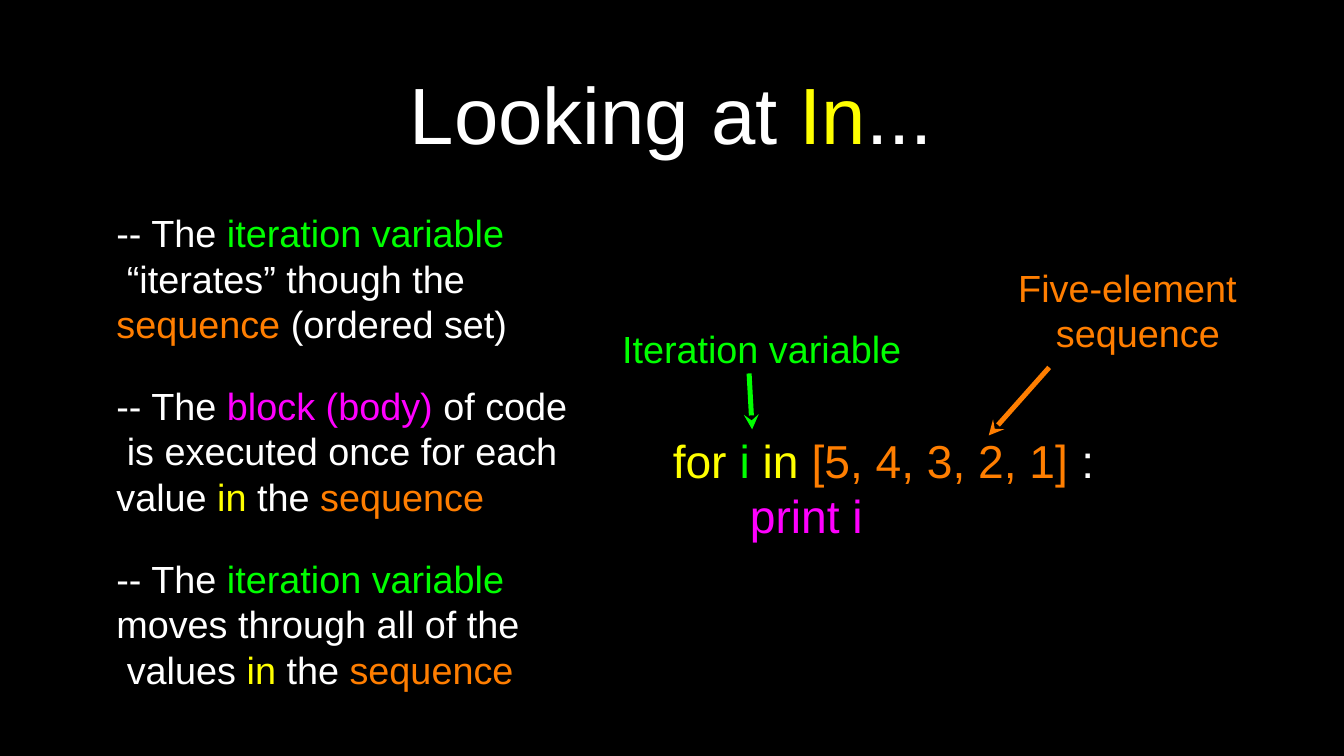
from lxml import etree
from pptx import Presentation
from pptx.dml.color import RGBColor
from pptx.enum.shapes import MSO_CONNECTOR, MSO_SHAPE
from pptx.enum.text import MSO_ANCHOR, MSO_AUTO_SIZE, PP_ALIGN
from pptx.oxml.ns import qn
from pptx.util import Inches, Pt

STRAIGHT = MSO_CONNECTOR.STRAIGHT
RECTANGLE = MSO_SHAPE.RECTANGLE
BOTTOM = MSO_ANCHOR.BOTTOM
NO_FIT = MSO_AUTO_SIZE.NONE
LEFT = PP_ALIGN.LEFT

FONT = "Arial"
BLACK, WHITE, YELLOW = "000000", "FFFFFF", "FFFF00"
GREEN, ORANGE, MAGENTA = "00FF00", "FF7E00", "FF00FF"
TITLE_ONLY = 5

TITLE = [[[("Looking at ", WHITE), ("In", YELLOW), ("...", WHITE)]]]
EXPLANATION = [
    [
        [("-- The ", WHITE), ("iteration variable", GREEN)],
        [(" “iterates” though the", WHITE)],
        [("sequence ", ORANGE), ("(ordered set)", WHITE)],
    ],
    [
        [("-- The ", WHITE), ("block (body) ", MAGENTA), ("of code", WHITE)],
        [(" is executed once for each", WHITE)],
        [("value ", WHITE), ("in ", YELLOW), ("the ", WHITE), ("sequence", ORANGE)],
    ],
    [
        [("-- The ", WHITE), ("iteration variable", GREEN)],
        [("moves through all of the", WHITE)],
        [(" values ", WHITE), ("in ", YELLOW), ("the ", WHITE), ("sequence", ORANGE)],
    ],
]
CODE = [
    [[("for ", YELLOW), ("i ", GREEN), ("in ", YELLOW),
      ("[5, 4, 3, 2, 1] ", ORANGE), (":", WHITE)]],
    [[("print i", MAGENTA)]],
]
VARIABLE_LABEL = [[[("Iteration variable", GREEN)]]]
SEQUENCE_LABEL = [[[("Five-element", ORANGE)], [(" sequence", ORANGE)]]]


def color(value):
    """Return the colour for a hex string."""
    return RGBColor.from_string(value)


def add_backdrop(deck, page):
    """Cover the page with a black rectangle behind everything else."""
    backdrop = page.shapes.add_shape(
        RECTANGLE, 0, 0, deck.slide_width, deck.slide_height)
    backdrop.shadow.inherit = False
    backdrop.fill.solid()
    backdrop.fill.fore_color.rgb = color(BLACK)
    backdrop.line.fill.background()
    page.shapes._spTree.insert(2, backdrop._element)


def indent(para, margin, first=0):
    """Set the left margin and first-line indent of a paragraph in inches."""
    properties = para._p.get_or_add_pPr()
    properties.set("marL", str(Inches(margin)))
    properties.set("indent", str(Inches(first)))


def add_spans(para, lines, size):
    """Fill a paragraph with lines of coloured spans."""
    for number, line in enumerate(lines):
        if number:
            para.add_line_break()
        for text, hue in line:
            span = para.add_run()
            span.text = text
            span.font.name = FONT
            span.font.size = Pt(size)
            span.font.color.rgb = color(hue)


def fill_box(box, place, paragraphs, size, gap=0):
    """Place a text shape and write its paragraphs."""
    box.left, box.top, box.width, box.height = map(Inches, place)
    frame = box.text_frame
    frame.word_wrap = True
    frame.auto_size = NO_FIT
    frame.vertical_anchor = BOTTOM
    frame.margin_left = frame.margin_right = 0
    frame.margin_top = frame.margin_bottom = 0
    for number, lines in enumerate(paragraphs):
        para = frame.add_paragraph() if number else frame.paragraphs[0]
        para.alignment = LEFT
        para.line_spacing = 1
        para.space_before = Pt(gap if number else 0)
        indent(para, 0.01)
        add_spans(para, lines, size)
    return frame


def add_text(page, place, paragraphs, size, gap=0):
    """Add a text box and return its text frame."""
    box = page.shapes.add_textbox(*map(Inches, place))
    return fill_box(box, place, paragraphs, size, gap)


def add_arrow(page, start, end, hue):
    """Draw a straight arrow between two points."""
    arrow = page.shapes.add_connector(STRAIGHT, *map(Inches, start + end))
    arrow.line.width = Pt(4.75)
    arrow.line.color.rgb = color(hue)
    line = arrow.line._get_or_add_ln()
    etree.SubElement(line, qn("a:tailEnd"), type="stealth", w="med", len="med")
    etree.SubElement(arrow._element.spPr, qn("a:effectLst"))


def main():
    """Build the slide and save it."""
    deck = Presentation()
    deck.slide_width, deck.slide_height = Inches(17.78), Inches(10)
    page = deck.slides.add_slide(deck.slide_layouts[TITLE_ONLY])
    add_backdrop(deck, page)

    fill_box(page.shapes.title, (5.41, 0.85, 6.95, 1.27), TITLE, 76)
    add_text(page, (1.53, 2.76, 6, 6.39), EXPLANATION, 36, gap=35)
    code = add_text(page, (8.89, 5.69, 5.61, 1.49), CODE, 44)
    indent(code.paragraphs[1], 1.03)
    add_text(page, (8.22, 4.29, 3.73, 0.62), VARIABLE_LABEL, 36)
    label = add_text(page, (13.46, 3.48, 2.92, 1.22), SEQUENCE_LABEL, 36)
    indent(label.paragraphs[0], 0.37, -0.36)

    add_arrow(page, (9.91, 4.94), (9.95, 5.68), GREEN)
    add_arrow(page, (13.88, 4.86), (13.08, 5.76), ORANGE)
    deck.save("out.pptx")


if __name__ == "__main__":
    main()
